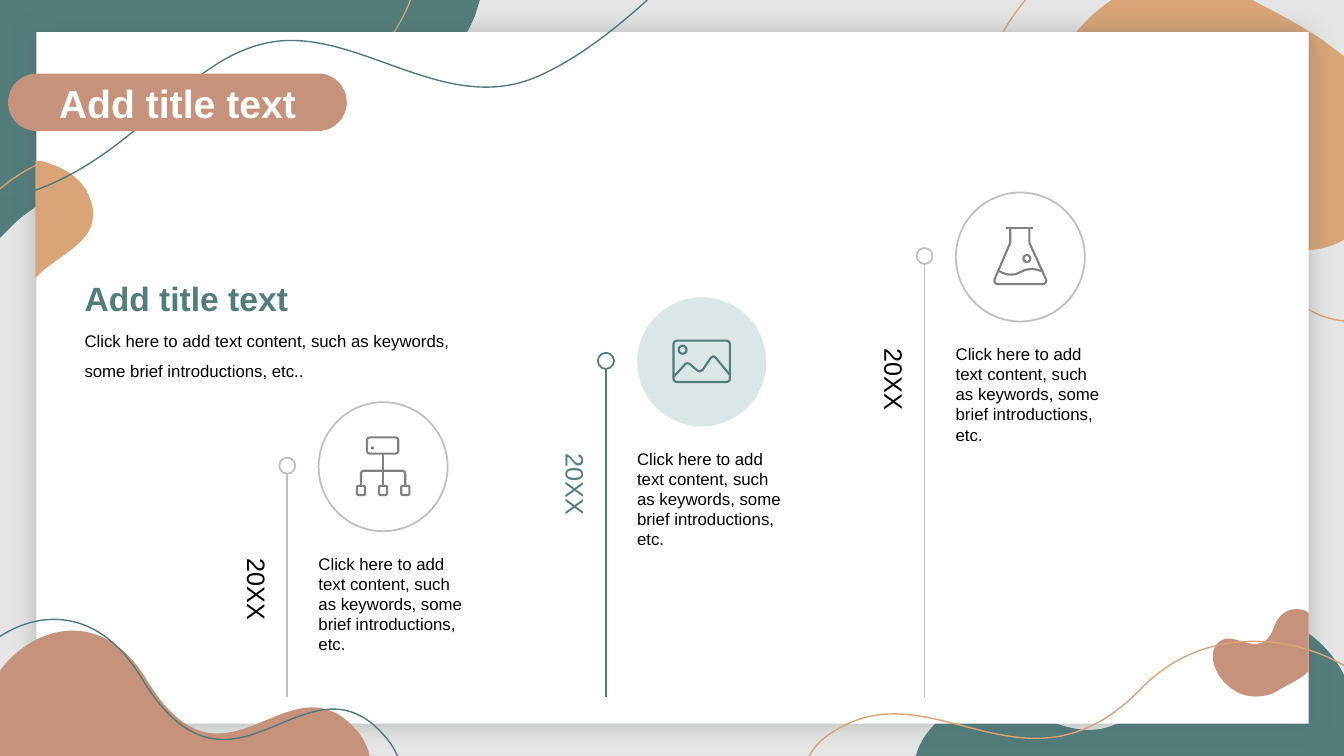
from lxml.etree import SubElement
from pptx import Presentation
from pptx.dml.color import RGBColor
from pptx.enum.shapes import MSO_CONNECTOR, MSO_SHAPE
from pptx.enum.text import MSO_ANCHOR, MSO_AUTO_SIZE, PP_ALIGN
from pptx.oxml.ns import qn
from pptx.util import Inches, Pt

TEAL, DEEP_TEAL, PALE_TEAL = "527D7B", "52797B", "DAE7E6"
SAND, CLAY = "D8A478", "C6927B"
SILVER, GRAY, WHITE, BLACK = "BFBFBF", "808080", "FFFFFF", "000000"
ICON_WEIGHT = 1.5
STEP_TEXT = ("Click here to add text content, such as keywords, "
             "some brief introductions, etc.")

BACK_WAVES = [
    (TEAL, None, [(13.34, 7.51), (13.4, 7.33, 13.43, 7.14, 13.4, 6.92),
                  (13.31, 6.29, 12.24, 5.56, 11.59, 6.65),
                  (10.71, 8.1, 10, 6.31, 9.23, 7.23),
                  (9.16, 7.31, 9.11, 7.4, 9.08, 7.51)]),
    (TEAL, None, [(0, 0), (4.76, 0), (4.71, 0.16), (4.4, 0.89, 3.65, 1.46, 2.25, 1.55),
                  (1.19, 1.62, 0.54, 1.86, 0.15, 2.21), (0, 2.36)]),
    (SAND, None, [(11.69, -0.21), (10.8, -0.19, 10.18, 0.81, 10.47, 1.3),
                  (10.93, 2.12, 11.84, 0.68, 12.3, 1.96),
                  (12.49, 2.49, 12.9, 2.56, 13.25, 2.42), (13.33, 2.38), (13.33, 0.56),
                  (13.15, 0.42), (12.86, 0.22, 12.55, 0.07, 12.34, -0.04),
                  (12.12, -0.16, 11.9, -0.21, 11.69, -0.21)]),
    (None, SAND, [(11.61, -0.72), (10.31, -0.7, 9.42, 0.76, 9.83, 1.48),
                  (10.51, 2.67, 11.82, 0.57, 12.49, 2.42),
                  (12.77, 3.2, 13.36, 3.3, 13.87, 3.1), (13.99, 3.04), (13.99, 0.39),
                  (13.73, 0.19), (13.31, -0.1, 12.85, -0.32, 12.56, -0.48),
                  (12.22, -0.65, 11.9, -0.73, 11.61, -0.72)]),
    (None, SAND, [(-0.15, -0.11), (4.11, -0.11), (4.06, 0.03),
                  (3.79, 0.69, 3.11, 1.21, 1.86, 1.29),
                  (0.91, 1.36, 0.33, 1.58, -0.02, 1.89), (-0.15, 2.03)]),
]
FRONT_WAVES = [
    (CLAY, None, [(-0.08, 7.51), (-0.15, 7.35, -0.17, 7.18, -0.14, 6.99),
                  (-0.07, 6.43, 0.88, 5.79, 1.46, 6.75),
                  (2.24, 8.04, 2.87, 6.45, 3.55, 7.26),
                  (3.61, 7.33, 3.65, 7.42, 3.67, 7.51)]),
    (SAND, None, [(0.92, 2.17), (0.89, 2.44, 0.54, 2.55, 0.35, 2.76), (0.35, 1.6),
                  (0.42, 1.6), (0.64, 1.66, 0.81, 1.77, 0.88, 1.94),
                  (0.92, 2.03, 0.93, 2.1, 0.92, 2.17)]),
    (None, DEEP_TEAL, [(-0.41, 7.61), (-0.48, 7.43, -0.51, 7.22, -0.48, 7),
                       (-0.39, 6.35, 0.72, 5.6, 1.4, 6.72),
                       (2.31, 8.23, 3.04, 6.37, 3.83, 7.32),
                       (3.9, 7.4, 3.95, 7.5, 3.98, 7.61)]),
    (None, DEEP_TEAL, [(-4.79, 2.32), (-2.97, 2.3, -1.14, 2.28, 0.09, 1.97),
                       (1.33, 1.65, 1.76, 0.63, 2.63, 0.43),
                       (3.51, 0.23, 4.39, 1.17, 5.33, 0.76),
                       (6.27, 0.35, 7.28, -0.85, 8.28, -2.05)]),
    (CLAY, None, [(12.45, 6.91), (12.16, 6.91, 11.96, 6.58, 12.05, 6.42),
                  (12.2, 6.16, 12.5, 6.62, 12.64, 6.21),
                  (12.71, 6.04, 12.84, 6.02, 12.95, 6.06), (12.98, 6.08), (12.98, 6.66),
                  (12.92, 6.71), (12.83, 6.77, 12.72, 6.82, 12.66, 6.86),
                  (12.59, 6.9, 12.51, 6.91, 12.45, 6.91)]),
    (None, SAND, [(13.65, 7.55), (13.74, 7.4, 13.78, 7.24, 13.74, 7.05),
                  (13.62, 6.53, 12.2, 5.92, 11.32, 6.83),
                  (10.15, 8.04, 9.21, 6.55, 8.19, 7.31),
                  (8.1, 7.38, 8.04, 7.46, 8, 7.55)]),
]


def rgb(color):
    """Turn a hex string into a colour."""
    return RGBColor.from_string(color)


def paint(shape, fill, line, weight):
    """Set fill and outline, either of which may be None."""
    shape.shadow.inherit = False
    if fill:
        shape.fill.solid()
        shape.fill.fore_color.rgb = rgb(fill)
    else:
        shape.fill.background()
    if line:
        shape.line.color.rgb = rgb(line)
        shape.line.width = Pt(weight)
    else:
        shape.line.fill.background()
    return shape


def add_preset(shapes, kind, box, fill=None, line=None, weight=1.25):
    """Add a preset shape in a box of left, top, width and height."""
    return paint(shapes.add_shape(kind, *map(Inches, box)), fill, line, weight)


def add_curve(shapes, segments, fill=None, line=None, weight=1, close=False):
    """Draw an outline of points and cubic curves after its start point."""
    start, *rest = [(Inches(x), Inches(y)) for segment in segments
                    for x, y in zip(segment[::2], segment[1::2])]
    builder = shapes.build_freeform(*start)
    builder.add_line_segments(rest, close=close)
    shape = builder.convert_to_shape()
    strokes = iter(list(shape.element.iter(qn("a:lnTo"))))
    for segment in segments[1:]:
        stroke = next(strokes)
        if len(segment) == 6:
            stroke.tag = qn("a:cubicBezTo")
            for follower in (next(strokes), next(strokes)):
                stroke.append(follower[0])
                follower.getparent().remove(follower)
    return paint(shape, fill, line, weight)


def add_line(shapes, start, end, color, weight=1.25):
    """Add a straight line between two points."""
    line = shapes.add_connector(MSO_CONNECTOR.STRAIGHT, *map(Inches, start + end))
    line.line.color.rgb = rgb(color)
    line.line.width = Pt(weight)
    SubElement(line.element.spPr, qn("a:effectLst"))


def write(shape, text, size, color, bold=False, spacing=None):
    """Fill a shape with one formatted paragraph."""
    frame = shape.text_frame
    frame.word_wrap = True
    frame.text = text
    paragraph = frame.paragraphs[0]
    paragraph.line_spacing = spacing
    font = paragraph.font
    font.name, font.size, font.bold = "Arial", Pt(size), bold
    font.color.rgb = rgb(color)
    return frame


def add_text(shapes, box, *content, **style):
    """Add a wrapping text box."""
    return write(shapes.add_textbox(*map(Inches, box)), *content, **style)


def draw_network(shapes, color):
    """Draw a box that branches into three nodes."""
    add_preset(shapes, MSO_SHAPE.ROUNDED_RECTANGLE, (3.64, 4.34, 0.31, 0.16),
               None, color, ICON_WEIGHT)
    add_preset(shapes, MSO_SHAPE.OVAL, (3.68, 4.43, 0.03, 0.03), color)
    add_line(shapes, (3.8, 4.5), (3.8, 4.82), color, ICON_WEIGHT)
    add_curve(shapes, [(3.58, 4.82), (3.58, 4.7), (3.58, 4.68, 3.59, 4.67, 3.61, 4.67),
                       (3.99, 4.67), (4.01, 4.67, 4.02, 4.68, 4.02, 4.7), (4.02, 4.82)],
              None, color, ICON_WEIGHT)
    for node in range(3):
        add_preset(shapes, MSO_SHAPE.ROUNDED_RECTANGLE,
                   (3.54 + 0.22 * node, 4.82, 0.08, 0.09), None, color, ICON_WEIGHT)


def draw_landscape(shapes, color):
    """Draw a framed landscape with a sun and mountains."""
    frame = add_preset(shapes, MSO_SHAPE.ROUNDED_RECTANGLE, (6.68, 3.38, 0.56, 0.41),
                       None, color, ICON_WEIGHT)
    frame.adjustments[0] = 0.08
    add_preset(shapes, MSO_SHAPE.OVAL, (6.73, 3.43, 0.08, 0.08), None, color, ICON_WEIGHT)
    add_curve(shapes, [(6.68, 3.74), (6.8, 3.61), (6.81, 3.6, 6.83, 3.6, 6.84, 3.61),
                       (6.91, 3.67), (6.93, 3.69, 6.95, 3.69, 6.97, 3.67), (7.05, 3.55),
                       (7.07, 3.53, 7.09, 3.53, 7.1, 3.55), (7.24, 3.72)],
              None, color, ICON_WEIGHT)


def draw_flask(shapes, color):
    """Draw a flask with liquid and a bubble."""
    add_line(shapes, (9.98, 2.26), (10.25, 2.26), color, ICON_WEIGHT)
    add_curve(shapes, [(10.02, 2.26), (10.02, 2.41), (9.87, 2.76),
                       (9.85, 2.79, 9.87, 2.82, 9.9, 2.82), (10.34, 2.82),
                       (10.37, 2.82, 10.39, 2.79, 10.37, 2.76), (10.21, 2.41),
                       (10.21, 2.26)], None, color, ICON_WEIGHT)
    add_curve(shapes, [(9.91, 2.69), (9.98, 2.73, 10.06, 2.74, 10.12, 2.7),
                       (10.18, 2.66, 10.26, 2.66, 10.33, 2.69)], None, color, ICON_WEIGHT)
    add_preset(shapes, MSO_SHAPE.OVAL, (10.15, 2.53, 0.07, 0.07), None, color, ICON_WEIGHT)


def add_step(shapes, index, accent, year_color, circle_fill, circle_line):
    """Add a timeline step, each one further right and higher."""
    x, y = 3.16 * index, -1.04 * index
    add_text(shapes, (3.06 + x, 5.44 + y, 1.71, 1.28), STEP_TEXT, 12, BLACK)
    add_line(shapes, (2.85 + x, 4.7 + y), (2.85 + x, 6.91), accent)
    add_preset(shapes, MSO_SHAPE.OVAL, (2.77 + x, 4.54 + y, 0.16, 0.16), WHITE, accent)
    year = add_text(shapes, (2.25 + x, 5.44 + y, 0.5, 0.99), "20XX", 18, year_color)
    year._bodyPr.set("vert", "eaVert")
    add_preset(shapes, MSO_SHAPE.OVAL, (3.16 + x, 3.99 + y, 1.28, 1.28),
               circle_fill, circle_line)


def add_backdrop(shapes):
    """Add the tinted ground, the waves and the white panel with its glow."""
    ground = add_preset(shapes, MSO_SHAPE.RECTANGLE, (0, 0, 13.33, 7.5), GRAY)
    tint = ground.element.spPr.find(qn("a:solidFill"))[0]
    SubElement(tint, qn("a:alpha"), val="20000")
    for fill, line, outline in BACK_WAVES:
        add_curve(shapes, outline, fill, line, close=True)
    panel = add_preset(shapes, MSO_SHAPE.RECTANGLE, (0.36, 0.32, 12.62, 6.86), WHITE)
    glow = SubElement(panel.element.spPr.find(qn("a:effectLst")), qn("a:outerShdw"),
                      blurRad=str(Pt(17)), dist="0", dir="0", algn="ctr", rotWithShape="0")
    SubElement(SubElement(glow, qn("a:srgbClr"), val="566363"), qn("a:alpha"), val="35000")
    for fill, line, outline in FRONT_WAVES:
        add_curve(shapes, outline, fill, line, close=fill is not None)


def add_title(shapes):
    """Put the title placeholder on its rounded label."""
    label = add_preset(shapes, MSO_SHAPE.ROUNDED_RECTANGLE, (0.08, 0.73, 3.36, 0.57), CLAY)
    label.adjustments[0] = 0.5
    title = shapes.title
    title.left, title.top, title.width, title.height = map(Inches, (0.37, 0.74, 2.78, 0.57))
    frame = write(title, "Add title text", 28, WHITE, bold=True)
    frame.auto_size = MSO_AUTO_SIZE.NONE
    frame.vertical_anchor = MSO_ANCHOR.TOP
    frame.paragraphs[0].alignment = PP_ALIGN.CENTER
    shapes.element.append(title.element)


def main():
    """Build the slide and save it."""
    deck = Presentation()
    deck.slide_width, deck.slide_height = Inches(13.33), Inches(7.5)
    shapes = deck.slides.add_slide(deck.slide_layouts[5]).shapes
    add_backdrop(shapes)
    add_title(shapes)
    add_step(shapes, 0, SILVER, BLACK, None, SILVER)
    draw_network(shapes, GRAY)
    add_step(shapes, 1, TEAL, TEAL, PALE_TEAL, None)
    draw_landscape(shapes, TEAL)
    add_step(shapes, 2, SILVER, BLACK, None, SILVER)
    draw_flask(shapes, GRAY)
    add_text(shapes, (0.74, 3.13, 4.19, 0.67), STEP_TEXT + ".", 12, BLACK, spacing=1.5)
    heading = add_text(shapes, (0.74, 1.85, 5.07, 1.36), "Add title text", 24, TEAL,
                       bold=True, spacing=1.2)
    heading.vertical_anchor = MSO_ANCHOR.BOTTOM
    deck.save("out.pptx")


if __name__ == "__main__":
    main()
